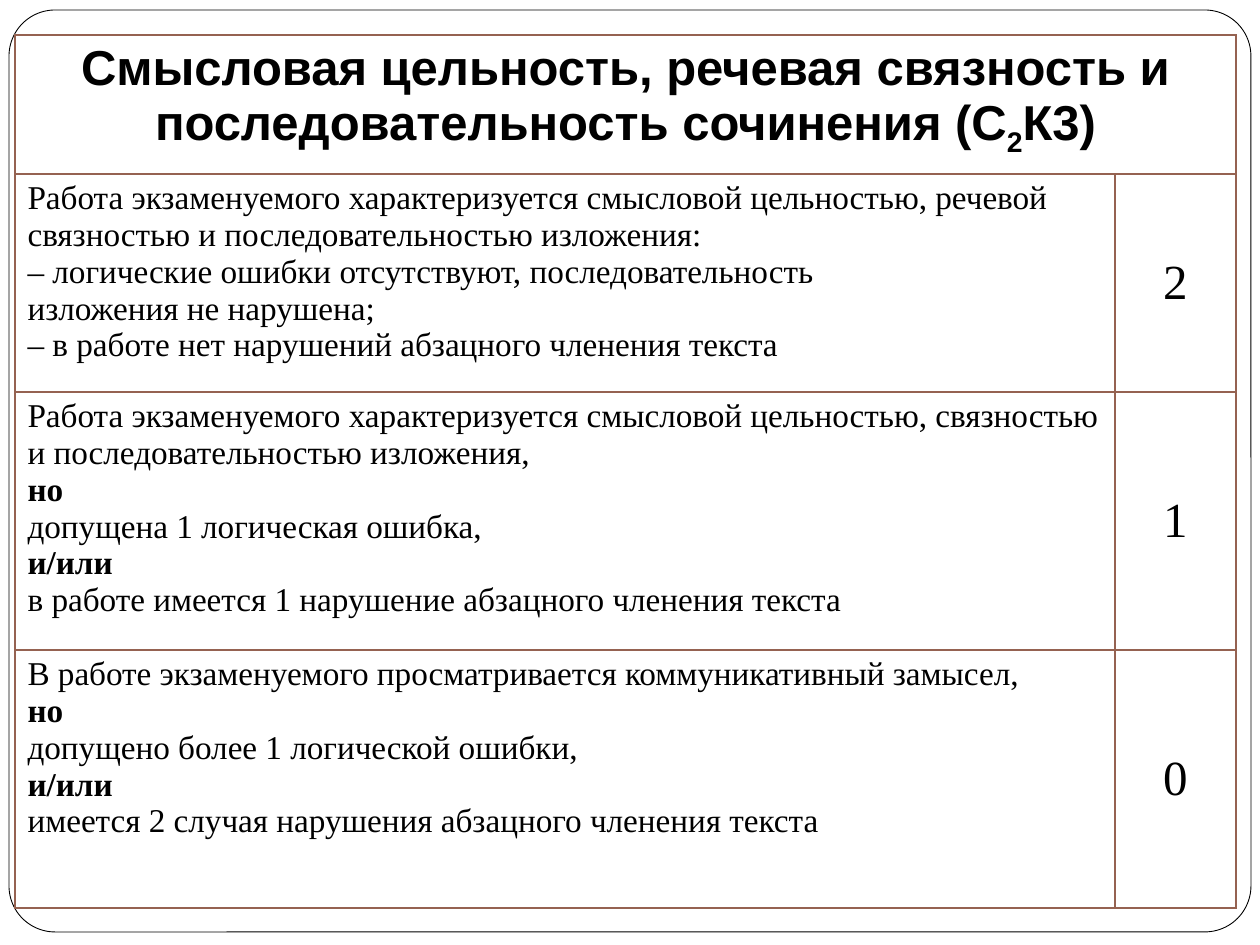
from pptx import Presentation
from pptx.dml.color import RGBColor
from pptx.enum.shapes import MSO_SHAPE
from pptx.enum.text import MSO_ANCHOR, PP_ALIGN
from pptx.oxml import parse_xml
from pptx.oxml.ns import nsdecls
from pptx.util import Emu, Pt

PX = 914400 / 126
ROUNDED = MSO_SHAPE.ROUNDED_RECTANGLE
CENTER, MIDDLE = PP_ALIGN.CENTER, MSO_ANCHOR.MIDDLE
COLORS = {"paper": "FFFFFF", "ink": "000000", "border": "956251"}
HEADING = ["Смысловая цельность, речевая связность и",
           "последовательность сочинения (С"]
CRITERIA = [
    ("2", ["Работа экзаменуемого характеризуется смысловой цельностью, речевой "
           "связностью и последовательностью изложения:",
           "– логические ошибки отсутствуют, последовательность",
           "изложения не нарушена;",
           "– в работе нет нарушений абзацного членения текста"]),
    ("1", ["Работа экзаменуемого характеризуется смысловой цельностью, связностью "
           "и последовательностью изложения,",
           "но",
           "допущена 1 логическая ошибка,",
           "и/или",
           "в работе имеется 1 нарушение абзацного членения текста"]),
    ("0", ["В работе экзаменуемого просматривается коммуникативный замысел,",
           "но",
           "допущено более 1 логической ошибки,",
           "и/или",
           "имеется 2 случая нарушения абзацного членения текста"]),
]
CONJUNCTIONS = {"но", "и/или"}
COLUMN_WIDTHS = [1100, 121]
ROW_HEIGHTS = [139, 218, 258, 258]


def px(*lengths):
    return [Emu(round(length * PX)) for length in lengths]


def format_runs(paragraph, font, size, bold=False):
    for run in paragraph.runs:
        run.font.name = font
        run.font.size = Pt(size)
        run.font.bold = bold
        run.font.color.rgb = RGBColor.from_string(COLORS["ink"])


prs = Presentation()
prs.slide_width, prs.slide_height = px(1260, 945)
slide = prs.slides.add_slide(prs.slide_layouts[6])

frame = slide.shapes.add_shape(ROUNDED, *px(9, 10, 1242, 922))
frame.adjustments[0] = 0.05
frame.shadow.inherit = False
frame.fill.solid()
frame.fill.fore_color.rgb = RGBColor.from_string(COLORS["paper"])
frame.line.color.rgb = RGBColor.from_string(COLORS["ink"])
frame.line.width = Pt(0.5)

rubric = slide.shapes.add_table(
    len(ROW_HEIGHTS), len(COLUMN_WIDTHS),
    *px(15, 35, sum(COLUMN_WIDTHS), sum(ROW_HEIGHTS))).table
for column, width in zip(rubric.columns, px(*COLUMN_WIDTHS)):
    column.width = width
for row, height in zip(rubric.rows, px(*ROW_HEIGHTS)):
    row.height = height

for cell in rubric.iter_cells():
    for side in ("lnL", "lnR", "lnT", "lnB"):
        cell._tc.get_or_add_tcPr().append(parse_xml(
            f'<a:{side} {nsdecls("a")} w="{Pt(1)}"><a:solidFill>'
            f'<a:srgbClr val="{COLORS["border"]}"/></a:solidFill></a:{side}>'))
    cell.fill.background()

heading = rubric.cell(0, 0)
heading.merge(rubric.cell(0, 1))
heading.text_frame.text = "\n".join(HEADING)
code_line = heading.text_frame.paragraphs[-1]
subscript = code_line.add_run()
subscript.text = "2"
code_line.add_run().text = "К3)"
for paragraph in heading.text_frame.paragraphs:
    paragraph.alignment = CENTER
    format_runs(paragraph, "Arial", 28, bold=True)
subscript.font._element.set("baseline", "-25000")

for row, (points, lines) in enumerate(CRITERIA, start=1):
    description, score = rubric.cell(row, 0), rubric.cell(row, 1)
    description.text_frame.text = "\n".join(lines)
    for paragraph in description.text_frame.paragraphs:
        format_runs(paragraph, "Times New Roman", 19, paragraph.text in CONJUNCTIONS)

    score.text_frame.text = points
    score.vertical_anchor = MIDDLE
    score_line = score.text_frame.paragraphs[0]
    score_line.alignment = CENTER
    score_line.space_before = Pt(5.6)
    format_runs(score_line, "Times New Roman", 28)

prs.save("out.pptx")
